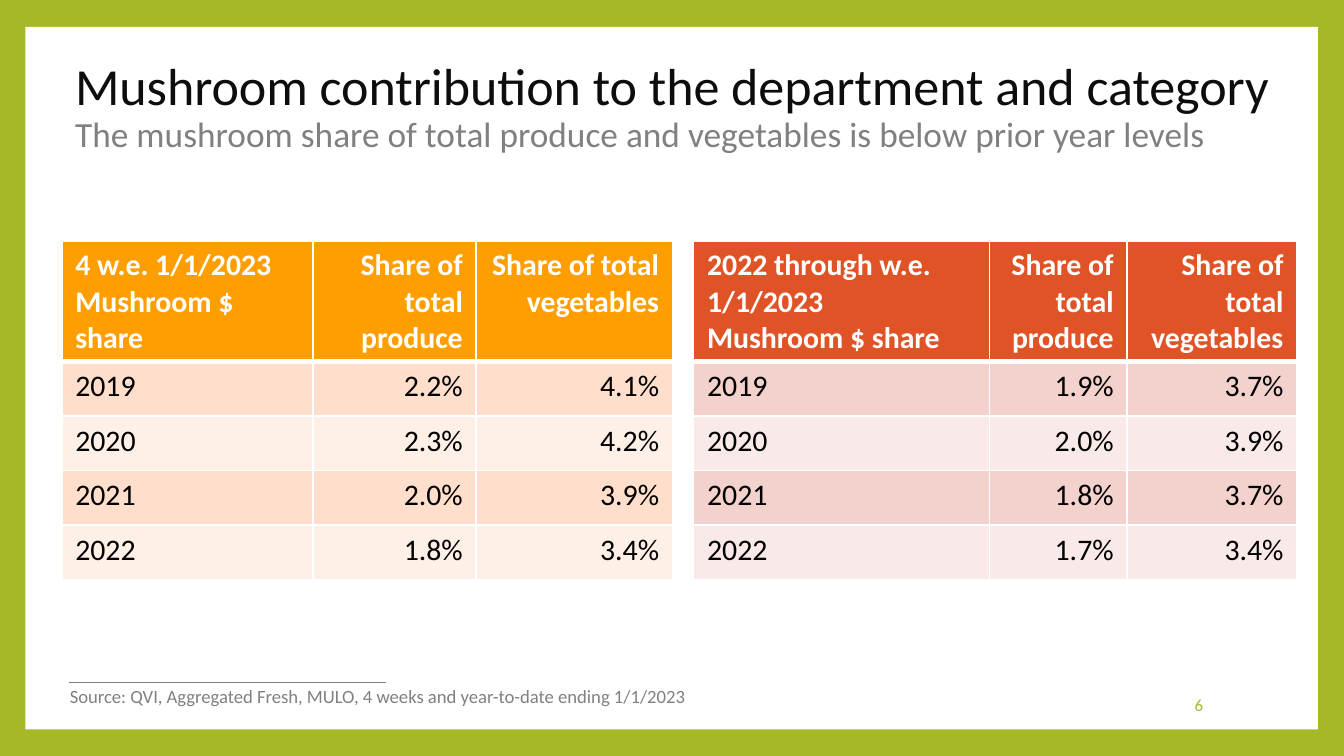
from dataclasses import dataclass

from lxml.etree import SubElement
from pptx import Presentation
from pptx.dml.color import RGBColor as Rgb
from pptx.enum.shapes import MSO_CONNECTOR as Connector, MSO_SHAPE as Preset
from pptx.enum.text import MSO_ANCHOR as Anchor, PP_ALIGN as Align
from pptx.oxml.ns import qn
from pptx.slide import Slide
from pptx.table import _Cell as Cell
from pptx.text.text import _Paragraph as Paragraph
from pptx.util import Cm, Pt


@dataclass(frozen=True)
class Theme:
    """Colours and type sizes of the slide."""
    font: str = "Calibri"
    green: str = "A6B727"
    white: str = "FFFFFF"
    black: str = "000000"
    ink: str = "0D0D0D"
    grey: str = "808080"
    title: float = 27.9
    subtitle: float = 18.9
    table: float = 16
    source: float = 10
    number: float = 9


@dataclass(frozen=True)
class Passage:
    """A stretch of text in one style."""
    text: str
    size: float
    colour: str
    bold: bool = False


@dataclass(frozen=True)
class Note:
    """A text box in centimetres."""
    left: float
    top: float
    width: float
    height: float
    passages: tuple[Passage, ...]
    paragraph_format: dict
    anchor: Anchor = Anchor.TOP


@dataclass(frozen=True)
class ShareTable:
    """Mushroom dollar shares over one period."""
    left: float
    columns: tuple[float, ...]
    heading: str
    header_fill: str
    bands: tuple[str, str]
    shares: tuple[tuple[str, str, str], ...]


THEME = Theme()
TABLE_TOP, HEADER_HEIGHT, ROW_HEIGHT = 4.55, 2.28, 1.03
SHARE_HEADINGS = ("Share of total produce", "Share of total vegetables")

NOTES = (
    Note(1.17, 1.35, 24.33, 1.37, (
        Passage("Mushroom contribution to the department and category",
                THEME.title, THEME.ink),
        Passage("The mushroom share of total produce and vegetables "
                "is below prior year levels", THEME.subtitle, THEME.grey),
    ), {"line_spacing": 0.9}, Anchor.MIDDLE),
    Note(19.43, 12.95, 3.56, 0.76,
         (Passage("6", THEME.number, THEME.green),),
         {"alignment": Align.RIGHT}, Anchor.MIDDLE),
    Note(1.07, 12.83, 12.5, 0.69,
         (Passage("Source: QVI, Aggregated Fresh, MULO, 4 weeks and "
                  "year-to-date ending 1/1/2023", THEME.source, THEME.grey),),
         {"alignment": Align.LEFT}),
)

TABLES = (
    ShareTable(1.17, (4.74, 3.09, 3.71), "4 w.e. 1/1/2023\nMushroom $ share",
               "FE9E00", ("FFDFCC", "FFF0E7"),
               (("2019", "2.2%", "4.1%"), ("2020", "2.3%", "4.2%"),
                ("2021", "2.0%", "3.9%"), ("2022", "1.8%", "3.4%"))),
    ShareTable(13.11, (5.59, 2.6, 3.21),
               "2022 through w.e. 1/1/2023\nMushroom $ share",
               "DF5327", ("F3D1CD", "F9E9E8"),
               (("2019", "1.9%", "3.7%"), ("2020", "2.0%", "3.9%"),
                ("2021", "1.8%", "3.7%"), ("2022", "1.7%", "3.4%"))),
)


def write(paragraph: Paragraph, passage: Passage) -> None:
    """Append a passage, one run to a line."""
    for index, line in enumerate(passage.text.split("\n")):
        if index:
            break_line(paragraph, passage.size)
        run = paragraph.add_run()
        run.text = line
        font_format = {"name": THEME.font, "size": Pt(passage.size),
                       "bold": passage.bold}
        for attribute, value in font_format.items():
            setattr(run.font, attribute, value)
        run.font.color.rgb = Rgb.from_string(passage.colour)


def break_line(paragraph: Paragraph, size: float) -> None:
    """Add a line break as tall as the text before it."""
    paragraph.add_line_break()
    SubElement(paragraph._p[-1], qn("a:rPr"), sz=str(round(size * 100)))


def draw_note(slide: Slide, note: Note) -> None:
    """Draw a text box with its passages on separate lines."""
    frame = slide.shapes.add_textbox(
        Cm(note.left), Cm(note.top), Cm(note.width), Cm(note.height)).text_frame
    frame.word_wrap = True
    frame.vertical_anchor = note.anchor
    paragraph = frame.paragraphs[0]
    for attribute, value in note.paragraph_format.items():
        setattr(paragraph, attribute, value)
    for index, passage in enumerate(note.passages):
        if index:
            break_line(paragraph, note.passages[index - 1].size)
        write(paragraph, passage)


def draw_borders(cell: Cell, widths: dict[str, float]) -> None:
    """Give a cell white borders of the given widths in points."""
    properties = cell._tc.get_or_add_tcPr()
    for side, width in widths.items():
        border = SubElement(properties, qn(f"a:{side}"), w=str(Pt(width)))
        fill = SubElement(border, qn("a:solidFill"))
        SubElement(fill, qn("a:srgbClr"), val=THEME.white)


def draw_table(slide: Slide, table: ShareTable) -> None:
    """Draw a share table with a header and banded years."""
    rows = ((table.heading, *SHARE_HEADINGS), *table.shares)
    height = HEADER_HEIGHT + ROW_HEIGHT * len(table.shares)
    grid = slide.shapes.add_table(
        len(rows), len(table.columns), Cm(table.left), Cm(TABLE_TOP),
        Cm(sum(table.columns)), Cm(height)).table
    for column, width in zip(grid.columns, table.columns):
        column.width = Cm(width)
    for r, texts in enumerate(rows):
        header = r == 0
        grid.rows[r].height = Cm(HEADER_HEIGHT if header else ROW_HEIGHT)
        fill = table.header_fill if header else table.bands[(r - 1) % 2]
        colour = THEME.white if header else THEME.black
        for c, text in enumerate(texts):
            cell = grid.cell(r, c)
            draw_borders(cell, {"lnL": 1, "lnR": 1, "lnT": 3 if r == 1 else 1,
                                "lnB": 3 if header else 1})
            cell.fill.solid()
            cell.fill.fore_color.rgb = Rgb.from_string(fill)
            paragraph = cell.text_frame.paragraphs[0]
            paragraph.alignment = Align.RIGHT if c else Align.LEFT
            write(paragraph, Passage(text, THEME.table, colour, header))


def draw_backdrop(slide: Slide) -> None:
    """Draw the green border, white panel and source rule."""
    slide.background.fill.solid()
    slide.background.fill.fore_color.rgb = Rgb.from_string(THEME.green)
    panel = slide.shapes.add_shape(
        Preset.RECTANGLE, Cm(0.48), Cm(0.51), Cm(24.43), Cm(13.28))
    panel.shadow.inherit = False
    panel.fill.solid()
    panel.fill.fore_color.rgb = Rgb.from_string(THEME.white)
    panel.line.fill.background()
    rule = slide.shapes.add_connector(
        Connector.STRAIGHT, Cm(1.3), Cm(12.9), Cm(7.29), Cm(12.9))
    rule.line.color.rgb = Rgb.from_string(THEME.grey)
    rule.line.width = Pt(0.79)
    SubElement(rule._element.spPr, qn("a:effectLst"))


def main() -> None:
    """Build and save the slide."""
    deck = Presentation()
    deck.slide_width, deck.slide_height = Cm(25.4), Cm(14.29)
    slide = deck.slides.add_slide(deck.slide_layouts[6])
    draw_backdrop(slide)
    for note in NOTES:
        draw_note(slide, note)
    for table in TABLES:
        draw_table(slide, table)
    deck.save("out.pptx")


if __name__ == "__main__":
    main()
